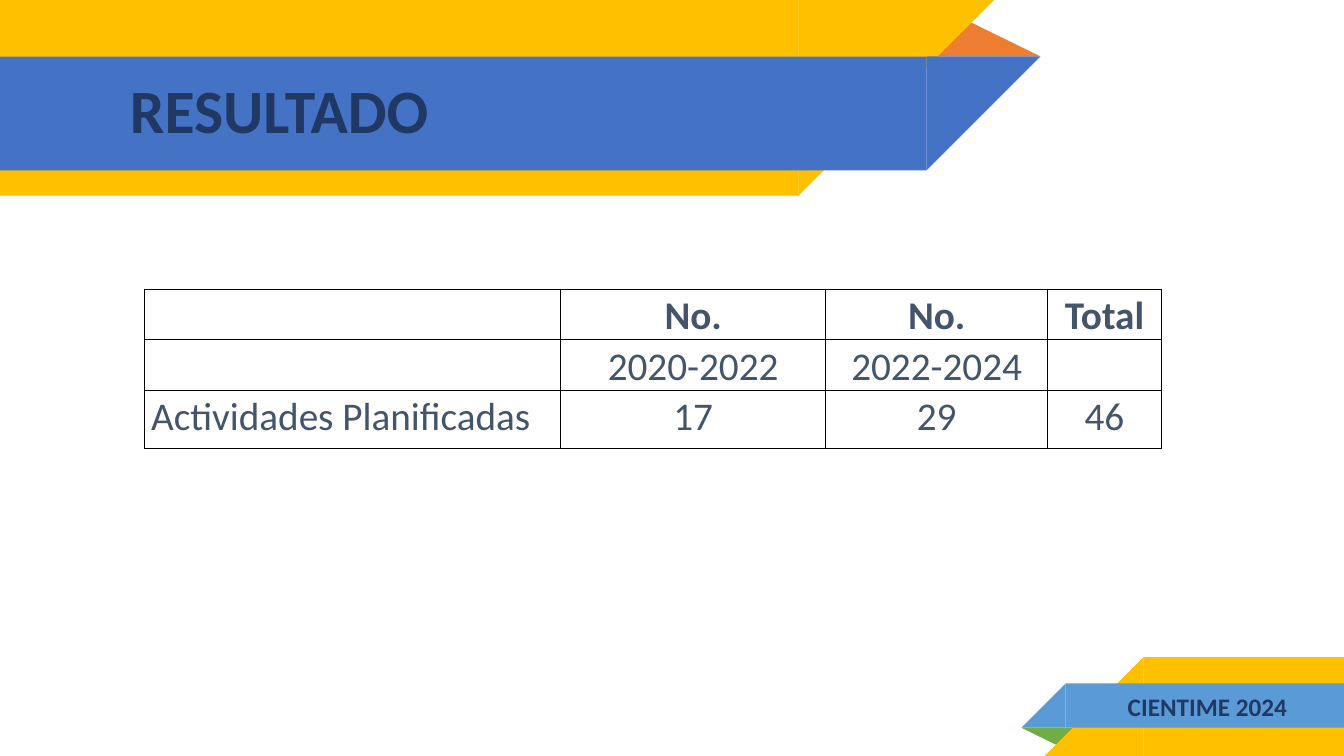
"""Build the RESULTADO slide: two ribbon corners, a title and an activity table."""
from lxml.etree import SubElement
from pptx import Presentation
from pptx.dml.color import RGBColor
from pptx.enum.shapes import MSO_SHAPE as SHAPE
from pptx.enum.text import MSO_ANCHOR as ANCHOR, PP_ALIGN as ALIGN
from pptx.oxml.ns import qn
from pptx.util import Inches, Pt

GOLD = RGBColor(0xFF, 0xC0, 0x00)
BLUE = RGBColor(0x44, 0x72, 0xC4)
SKY = RGBColor(0x5B, 0x9B, 0xD5)
ORANGE = RGBColor(0xED, 0x7D, 0x31)
GREEN = RGBColor(0x70, 0xAD, 0x47)
NAVY = RGBColor(0x20, 0x38, 0x64)
SLATE = RGBColor(0x44, 0x54, 0x6A)

prs = Presentation()
prs.slide_width, prs.slide_height = Inches(13.33), Inches(7.5)
UNIT = prs.slide_height // 750
s = prs.slides.add_slide(prs.slide_layouts[6])


def grid(*cells):
    return [UNIT * c for c in cells]


def write(tf, text, size=28, color=SLATE, bold=False, align=ALIGN.CENTER, spacing=1.0, after=0):
    p = tf.paragraphs[0]
    p.alignment, p.line_spacing, p.space_after = align, spacing, Pt(after)
    r = p.add_run()
    r.text = text
    r.font.name, r.font.size, r.font.bold = "Calibri", Pt(size), bold
    r.font.color.rgb = color


TRI, RECT, SLANT = SHAPE.ISOSCELES_TRIANGLE, SHAPE.RECTANGLE, SHAPE.RIGHT_TRIANGLE
ribbons = [
    (TRI, ORANGE, 0, False, (918, 18, 114, 38)),
    (RECT, GOLD, 180, True, (0, 0, 792, 194)),
    (SLANT, GOLD, 180, True, (792, 0, 194, 194)),
    (RECT, BLUE, 180, True, (0, 56, 919, 113)),
    (SLANT, BLUE, 180, True, (919, 56, 113, 113)),
    (TRI, GREEN, 180, False, (1013, 722, 57, 19)),
    (RECT, GOLD, 0, True, (1134, 652, 199, 98)),
    (SLANT, GOLD, 0, True, (1036, 652, 98, 98)),
    (RECT, SKY, 0, True, (1057, 678, 276, 44)),
    (SLANT, SKY, 0, True, (1013, 678, 44, 44)),
]
for kind, color, turn, flip, box in ribbons:
    sp = s.shapes.add_shape(kind, *grid(*box))
    sp.shadow.inherit = False
    sp.fill.solid()
    sp.fill.fore_color.rgb = color
    sp.line.fill.background()
    sp.rotation = turn
    if kind == TRI:
        sp.adjustments[0] = 0.32
    if flip:
        sp.element.spPr.find(qn("a:xfrm")).set("flipH", "1")

labels = [
    ("RESULTADO", (119, 57, 767, 112), ANCHOR.MIDDLE, 10,
     dict(size=44, align=ALIGN.LEFT, spacing=0.9)),
    ("CIENTIME 2024", (1089, 681, 217, 40), ANCHOR.TOP, 5, dict(size=18)),
]
for text, box, anchor, inset, style in labels:
    tf = s.shapes.add_textbox(*grid(*box)).text_frame
    tf.word_wrap, tf.vertical_anchor = True, anchor
    tf.margin_top = tf.margin_bottom = UNIT * inset
    write(tf, text, color=NAVY, bold=True, **style)

rows = [
    ("", "No.", "No.", "Total"),
    ("", "2020-2022", "2022-2024", ""),
    ("Actividades Planificadas", "17", "29", "46"),
]
table = s.shapes.add_table(3, 4, *grid(143, 287, 1009, 153)).table
table.first_row = table.horz_banding = False
for column, width in zip(table.columns, grid(413, 263, 220, 113)):
    column.width = width
for row, height in zip(table.rows, grid(45, 50, 58)):
    row.height = height
for i, row in enumerate(rows):
    for j, text in enumerate(row):
        cell = table.cell(i, j)
        if text:
            cell.margin_left = cell.margin_right = UNIT * 7
            cell.margin_top = cell.margin_bottom = 0
            write(cell.text_frame, text, bold=i == 0, spacing=1.07, after=8,
                  align=ALIGN.CENTER if j else ALIGN.LEFT)
        tcPr = cell._tc.get_or_add_tcPr()
        for side in ("a:lnL", "a:lnR", "a:lnT", "a:lnB"):
            ln = SubElement(tcPr, qn(side), w=str(Pt(1)))
            SubElement(SubElement(ln, qn("a:solidFill")), qn("a:srgbClr"), val="000000")
        cell.fill.background()

prs.save("out.pptx")
